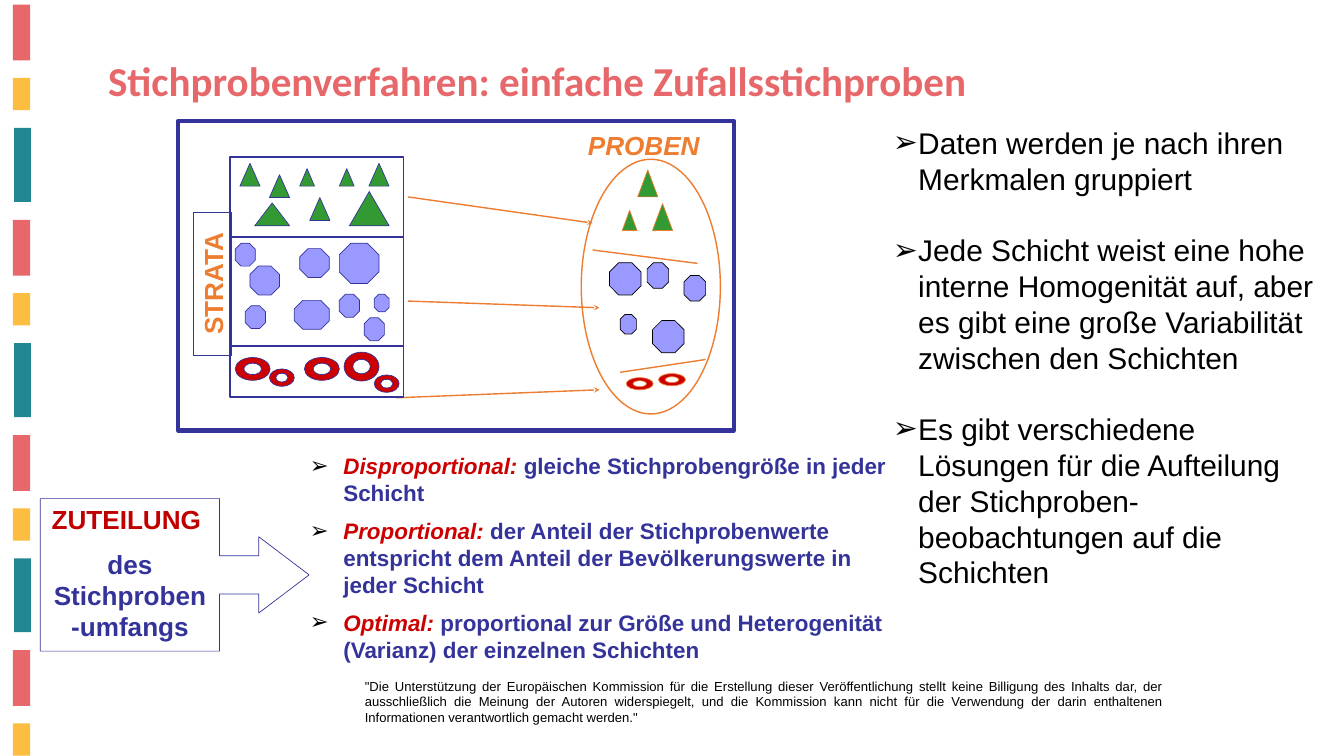
import math
from dataclasses import dataclass

import lxml.etree
import pptx
import pptx.dml.color
import pptx.enum.shapes
import pptx.enum.text
import pptx.oxml.ns
import pptx.util

SHAPE = pptx.enum.shapes.MSO_SHAPE
ALIGN = pptx.enum.text.PP_ALIGN
ANCHOR = pptx.enum.text.MSO_ANCHOR
qn = pptx.oxml.ns.qn
WIDTH, HEIGHT = pptx.util.Inches(20), pptx.util.Inches(11.25)
COL, ROW = WIDTH / 200, HEIGHT / 112.5


@dataclass(frozen=True)
class Theme:
    coral: str = "E8676A"
    yellow: str = "FDBD40"
    teal: str = "238791"
    title: str = "E7686A"
    navy: str = "333399"
    orange: str = "ED7D31"
    green: str = "339933"
    lilac: str = "9999FF"
    red: str = "CC0000"
    dark_red: str = "C00000"
    black: str = "000000"
    head_font: str = "Calibri"
    body_font: str = "Arial"
    title_size: int = 44
    body_size: int = 32
    label_size: int = 28
    list_size: int = 24
    note_size: int = 14
    hair: float = 0.75
    thin: float = 1.5
    medium: float = 2
    thick: float = 4.5


@dataclass(frozen=True)
class Box:
    x: float
    y: float
    w: float
    h: float

    def sub(self, x, y, w, h):
        return Box(self.x + x, self.y + y, w, h)

    def point(self, x, y):
        return round((self.x + x) * COL), round((self.y + y) * ROW)

    def emu(self):
        return (*self.point(0, 0), round(self.w * COL), round(self.h * ROW))


T = Theme()
rgb = pptx.dml.color.RGBColor.from_string


def paint(sp, fill, line, weight):
    sp.shadow.inherit = False
    if fill:
        sp.fill.solid()
        sp.fill.fore_color.rgb = rgb(fill)
    else:
        sp.fill.background()
    if line:
        sp.line.color.rgb = rgb(line)
        sp.line.width = pptx.util.Pt(weight)
    else:
        sp.line.fill.background()
    return sp


def shape(s, kind, box, fill=None, line=None, weight=T.hair):
    return paint(s.shapes.add_shape(kind, *box.emu()), fill, line, weight)


def ellipse_points(box, share, turn):
    points = [(1, 0)]
    for quarter in range(4):
        a, b = (turn * math.pi / 2 * (quarter + i) for i in range(2))
        k = 0.55 * turn
        points += [(math.cos(a) - k * math.sin(a), math.sin(a) + k * math.cos(a)),
                   (math.cos(b) + k * math.sin(b), math.sin(b) - k * math.cos(b)),
                   (math.cos(b), math.sin(b))]
    return [box.point(box.w / 2 * (1 + share * x), box.h / 2 * (1 + share * y))
            for x, y in points]


def ring(s, box, fill, line):
    outer, inner = ellipse_points(box, 1, 1), ellipse_points(box, 0.5, -1)
    builder = s.shapes.build_freeform(*outer[0])
    builder.add_line_segments(outer[1:], close=True)
    builder.move_to(*inner[0])
    builder.add_line_segments(inner[1:], close=True)
    sp = builder.convert_to_shape()
    segments = list(sp._element.iter(qn("a:lnTo")))
    for i in range(0, len(segments), 3):
        curve = lxml.etree.Element(qn("a:cubicBezTo"))
        segments[i].addprevious(curve)
        for segment in segments[i:i + 3]:
            curve.append(segment[0])
            segment.getparent().remove(segment)
    paint(sp, fill, line, T.hair)


def connect(s, box, start, end, color, weight, arrow=False):
    straight = pptx.enum.shapes.MSO_CONNECTOR.STRAIGHT
    line = s.shapes.add_connector(straight, *box.point(*start), *box.point(*end))
    line.line.color.rgb = rgb(color)
    line.line.width = pptx.util.Pt(weight)
    if arrow:
        lxml.etree.SubElement(line.line._get_or_add_ln(), qn("a:tailEnd"), type="stealth")
    lxml.etree.SubElement(line._element.spPr, qn("a:effectLst"))


def add_bullet(p, indent):
    pPr = p._p.get_or_add_pPr()
    margin = round(indent * COL)
    pPr.set("marL", str(margin))
    pPr.set("indent", str(-margin))
    color = lxml.etree.SubElement(pPr, qn("a:buClr"))
    lxml.etree.SubElement(color, qn("a:srgbClr"), val=T.black)
    lxml.etree.SubElement(pPr, qn("a:buFont"), typeface=T.body_font)
    lxml.etree.SubElement(pPr, qn("a:buChar"), char="➢")


def write(sp, paragraphs, size, font=T.body_font, bold=False, align=ALIGN.LEFT,
          gap=0, indent=0, inset=(1, 0.5), anchor=ANCHOR.TOP):
    tf = sp.text_frame
    tf.word_wrap = True
    tf.vertical_anchor = anchor
    tf.margin_left = tf.margin_right = round(inset[0] * COL)
    tf.margin_top = tf.margin_bottom = round(inset[1] * ROW)
    for i, runs in enumerate(paragraphs):
        p = tf.add_paragraph() if i else tf.paragraphs[0]
        p.alignment = align
        if indent:
            add_bullet(p, indent)
        if i and gap:
            p.space_before = pptx.util.Pt(gap)
        for text, color, italic in runs:
            r = p.add_run()
            r.text = text
            r.font.name, r.font.size = font, pptx.util.Pt(size)
            r.font.bold, r.font.italic = bold, italic
            r.font.color.rgb = rgb(color)


def textbox(s, box, paragraphs, size, **style):
    write(s.shapes.add_textbox(*box.emu()), paragraphs, size, **style)


def stripes(s, box):
    bands = [(0, 0, 2.6, 8.3, T.coral), (0, 10.9, 2.6, 4.8, T.yellow),
             (0.2, 18.35, 2.5, 11, T.teal)]
    for i in range(11):
        x, y, w, h, color = bands[i % 3]
        shape(s, SHAPE.RECTANGLE, box.sub(x, y + i // 3 * 32.02, w, h), color)


def title(s, box):
    text = "Stichprobenverfahren: einfache Zufallsstichproben"
    textbox(s, box, [[(text, T.title, False)]], T.title_size, font=T.head_font, bold=True)


def items(s, box, triangles, octagons, rings, line, octagon_line):
    for place in triangles:
        shape(s, SHAPE.ISOSCELES_TRIANGLE, box.sub(*place), T.green, line)
    for place in octagons:
        shape(s, SHAPE.OCTAGON, box.sub(*place), T.lilac, octagon_line)
    for place in rings:
        ring(s, box.sub(*place), T.red, line)


def strata(s, box):
    shape(s, SHAPE.RECTANGLE, box, None, T.navy, T.medium)
    for y in (11.9, 28.1):
        connect(s, box, (0, y), (box.w, y), T.navy, T.medium)
    triangles = [(1.5, 0.9, 3, 3.4), (5.9, 2.6, 3, 3.4), (3.7, 6.8, 5.2, 3.4),
                 (20.7, 0.9, 3, 3.4), (11.9, 6, 3, 3.4), (10.4, 1.7, 2.2, 2.6),
                 (17.8, 5.1, 5.9, 5.1), (16.3, 1.7, 2.2, 2.6)]
    octagons = [(3, 16.2, 4.4, 4.3), (9.6, 21.3, 5.2, 4.3), (10.4, 13.6, 4.4, 4.3),
                (20, 23.9, 3, 3.4), (16.3, 20.4, 3, 3.4), (21.5, 20.4, 2.2, 2.6),
                (16.3, 12.8, 5.9, 6), (0.8, 12.8, 3, 3.4), (2.3, 22.1, 3, 3.4)]
    rings = [(0.8, 29.8, 5.2, 3.4), (5.9, 31.5, 3.7, 2.6), (21.5, 32.4, 3.7, 2.6),
             (11.1, 29.8, 5.2, 3.4), (17, 29, 5.2, 4.3)]
    items(s, box, triangles, octagons, rings, T.navy, T.navy)


def sample(s, box):
    connect(s, box, (1.7, 13.5), (17.3, 15.5), T.orange, T.thin)
    connect(s, box, (5.8, 31.7), (18.5, 29.8), T.orange, T.thin)
    triangles = [(10.6, 6.6, 3, 4), (6.1, 7.6, 2.2, 3), (8.4, 1.6, 3, 4)]
    octagons = [(4.2, 15.4, 4.7, 4.8), (9.8, 15.4, 3.2, 3.8), (5.8, 23.1, 2.4, 2.9),
                (15.3, 17.3, 3.2, 3.8), (10.6, 24, 4.7, 4.8)]
    rings = [(6.7, 32.5, 4, 1.8), (11.5, 31.9, 4, 1.8)]
    items(s, box, triangles, octagons, rings, T.orange, T.black)
    shape(s, SHAPE.OVAL, box, None, T.orange, T.thin)


def diagram(s, box):
    for start, end in [((34.2, 11.3), (61.7, 15.2)), ((34.2, 26.8), (62.7, 27.8)),
                       ((32.4, 41.2), (62.7, 40))]:
        connect(s, box, start, end, T.orange, T.thin, arrow=True)
    sample(s, box.sub(60, 5.7, 20.7, 37.9))
    textbox(s, box.sub(56, 0.5, 26.6, 13.3), [[("PROBEN", T.orange, True)]],
            T.label_size, bold=True, align=ALIGN.CENTER, inset=(1.5, 0.7))
    strata(s, box.sub(7.7, 5.4, 25.85, 35.7))
    label = shape(s, SHAPE.RECTANGLE, box.sub(-5.5, 21.4, 21.3, 5.7), None, T.navy)
    label.rotation = 270
    write(label, [[("STRATA", T.orange, False)]], T.label_size, bold=True,
          align=ALIGN.CENTER, anchor=ANCHOR.MIDDLE)
    shape(s, SHAPE.RECTANGLE, box, None, T.navy, T.thick)


def allocation(s, box):
    callout = shape(s, SHAPE.RIGHT_ARROW_CALLOUT, box.sub(0, 7.7, 40, 22.7), None, T.navy)
    for i, value in enumerate((0.25, 0.25, 0.33, 0.667)):
        callout.adjustments[i] = value
    write(callout, [[("ZUTEILUNG ", T.dark_red, False)],
                    [("des Stichproben-umfangs", T.navy, False)]],
          T.label_size, bold=True, align=ALIGN.CENTER, gap=14, inset=(1.5, 0.75))
    methods = [
        ("Disproportional: ", "gleiche Stichprobengröße in jeder Schicht"),
        ("Proportional: ", "der Anteil der Stichprobenwerte entspricht dem Anteil der "
                           "Bevölkerungswerte in jeder Schicht"),
        ("Optimal: ", "proportional zur Größe und Heterogenität (Varianz) der einzelnen "
                      "Schichten"),
    ]
    textbox(s, box.sub(38.6, 0, 92.4, box.h),
            [[(name, T.red, True), (text, T.navy, False)] for name, text in methods],
            T.list_size, bold=True, gap=12, indent=5, inset=(1.5, 0.75))


def findings(s, box):
    points = [
        "Daten werden je nach ihren Merkmalen gruppiert",
        "Jede Schicht weist eine hohe interne Homogenität auf, aber es gibt eine große "
        "Variabilität zwischen den Schichten",
        "Es gibt verschiedene Lösungen für die Aufteilung der Stichproben-beobachtungen "
        "auf die Schichten",
    ]
    textbox(s, box, [[(text, T.black, False)] for text in points], T.body_size,
            gap=38, indent=3.75)


def disclaimer(s, box):
    text = ('"Die Unterstützung der Europäischen Kommission für die Erstellung dieser '
            "Veröffentlichung stellt keine Billigung des Inhalts dar, der ausschließlich die "
            "Meinung der Autoren widerspiegelt, und die Kommission kann nicht für die "
            'Verwendung der darin enthaltenen Informationen verantwortlich gemacht werden."')
    textbox(s, box, [[(text, T.black, False)]], T.note_size, align=ALIGN.JUSTIFY)


def main():
    prs = pptx.Presentation()
    prs.slide_width, prs.slide_height = WIDTH, HEIGHT
    s = prs.slides.add_slide(prs.slide_layouts[6])
    stripes(s, Box(1.9, 0.7, 2.6, 111.8))
    disclaimer(s, Box(53.3, 100.4, 120.8, 8.1))
    title(s, Box(15.1, 7.8, 153, 8.4))
    allocation(s, Box(6, 66.5, 131, 33.8))
    diagram(s, Box(26.5, 18, 82.7, 46.05))
    findings(s, Box(131.9, 18.05, 67.1, 71))
    prs.save("out.pptx")


if __name__ == "__main__":
    main()
